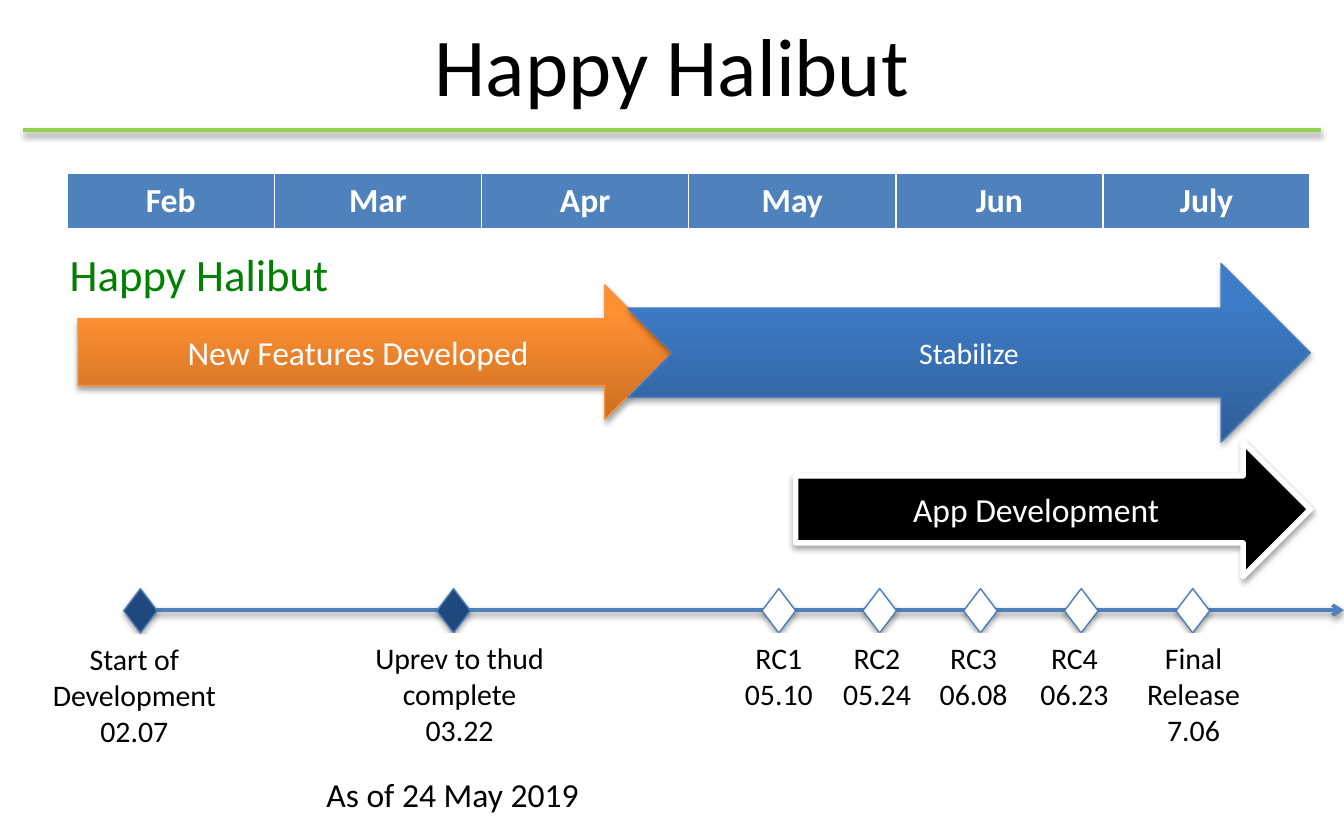
"""Build the Happy Halibut release timeline slide."""
import pptx
import pptx.util
import pptx.dml.color
import pptx.enum.shapes
import pptx.enum.text
import pptx.oxml
import pptx.oxml.ns

Inches, Pt = pptx.util.Inches, pptx.util.Pt
RGBColor = pptx.dml.color.RGBColor
MSO_SHAPE = pptx.enum.shapes.MSO_SHAPE
PP_ALIGN = pptx.enum.text.PP_ALIGN
MSO_ANCHOR = pptx.enum.text.MSO_ANCHOR

BLACK = RGBColor(0x00, 0x00, 0x00)
WHITE = RGBColor(0xFF, 0xFF, 0xFF)
GREEN = RGBColor(0x00, 0x80, 0x00)
LIME = RGBColor(0x92, 0xD0, 0x50)
BLUE = RGBColor(0x4F, 0x81, 0xBD)
NAVY = RGBColor(0x1F, 0x49, 0x7D)
EDGE_BLUE = RGBColor(0x4B, 0x7E, 0xBC)
EDGE_ORANGE = RGBColor(0xF6, 0x92, 0x40)
ORANGE_STOPS = (RGBColor(0xCC, 0x6E, 0x20), RGBColor(0xFF, 0x90, 0x34))
BLUE_STOPS = (RGBColor(0x2F, 0x5F, 0x99), RGBColor(0x3D, 0x7C, 0xC7))
BLACK_STOPS = (BLACK,)


def write(tf, text, size, color, align=PP_ALIGN.CENTER):
    tf.text = text
    tf.word_wrap = True
    for p in tf.paragraphs:
        p.alignment = align
        for r in p.runs:
            r.font.size = Pt(size)
            r.font.name = "Calibri"
            r.font.color.rgb = color


def add_line(s, x1, x2, y, color):
    line = s.shapes.add_connector(
        pptx.enum.shapes.MSO_CONNECTOR.STRAIGHT, Inches(x1), Inches(y), Inches(x2), Inches(y))
    line.line.color.rgb = color
    line.line.width = Pt(2)
    return line


prs = pptx.Presentation()
prs.slide_width, prs.slide_height = Inches(10), Inches(6.25)
s = prs.slides.add_slide(prs.slide_layouts[5])

add_line(s, 0.17, 9.83, 0.97, LIME)
title = s.shapes.title
title.left, title.top, title.width, title.height = Inches(0.5), Inches(0.12), Inches(9), Inches(0.71)
write(title.text_frame, "Happy Halibut", 44, BLACK)
title.text_frame.vertical_anchor = MSO_ANCHOR.MIDDLE

months = ["Feb", "Mar", "Apr", "May", "Jun", "July"]
table = s.shapes.add_table(
    1, len(months), Inches(0.5), Inches(1.29), Inches(9.25), Inches(0.41)).table
for cell, month in zip(table.rows[0].cells, months):
    cell.fill.solid()
    cell.fill.fore_color.rgb = BLUE
    write(cell.text_frame, month, 18, WHITE)
    cell.text_frame.paragraphs[0].runs[0].font.bold = True

axis = add_line(s, 1, 10, 4.54, BLUE)
axis.line._get_or_add_ln().append(pptx.oxml.parse_xml(
    f'<a:tailEnd {pptx.oxml.ns.nsdecls("a")} type="arrow"/>'))

captions = [
    (0.42, 1.79, 3.75, 0.5, "Happy Halibut", 24, GREEN),
    (2.33, 5.71, 2.75, 0.4, "As of 24 May 2019", 18, BLACK),
]
for x, y, w, h, text, size, color in captions:
    sp = s.shapes.add_textbox(Inches(x), Inches(y), Inches(w), Inches(h))
    write(sp.text_frame, text, size, color, PP_ALIGN.LEFT)

arrows = [
    (MSO_SHAPE.RIGHT_ARROW, 0.58, 2.12, 4.42, 1, "New Features Developed", 18,
     ORANGE_STOPS, EDGE_ORANGE, 0.75),
    (MSO_SHAPE.NOTCHED_RIGHT_ARROW, 4.67, 1.96, 5.08, 1.33, "Stabilize", 16,
     BLUE_STOPS, EDGE_BLUE, 0.75),
    (MSO_SHAPE.RIGHT_ARROW, 5.92, 3.29, 3.83, 1, "App Development", 18,
     BLACK_STOPS, WHITE, 3),
]
for kind, x, y, w, h, text, size, colors, edge, weight in arrows:
    sp = s.shapes.add_shape(kind, Inches(x), Inches(y), Inches(w), Inches(h))
    if len(colors) == 1:
        sp.fill.solid()
        sp.fill.fore_color.rgb = colors[0]
    else:
        sp.fill.gradient()
        sp.fill.gradient_angle = 90
        for stop, color, position in zip(sp.fill.gradient_stops, colors, (0, 0.8)):
            stop.color.rgb = color
            stop.position = position
    sp.line.color.rgb = edge
    sp.line.width = Pt(weight)
    write(sp.text_frame, text, size, WHITE)
    sp.text_frame.vertical_anchor = MSO_ANCHOR.MIDDLE

milestones = [
    (0.92, NAVY, 0.25, 4.72, 1.5, 0.91, "Start of Development\n02.07"),
    (3.25, NAVY, 2.67, 4.71, 1.5, 0.91, "Uprev to thud complete\n03.22"),
    (5.67, WHITE, 5.42, 4.71, 0.75, 0.64, "RC1\n05.10"),
    (6.42, WHITE, 6.17, 4.71, 0.71, 0.64, "RC2\n05.24"),
    (7.17, WHITE, 6.83, 4.71, 0.83, 0.64, "RC3\n06.08"),
    (7.92, WHITE, 7.58, 4.71, 0.83, 0.64, "RC4\n06.23"),
    (8.75, WHITE, 8.42, 4.71, 0.92, 0.91, "Final Release 7.06"),
]
for marker_x, color, x, y, w, h, text in milestones:
    sp = s.shapes.add_shape(
        MSO_SHAPE.DIAMOND, Inches(marker_x), Inches(4.38), Inches(0.25), Inches(0.33))
    sp.fill.solid()
    sp.fill.fore_color.rgb = color
    sp.line.color.rgb = EDGE_BLUE
    sp.line.width = Pt(0.75)
    sp = s.shapes.add_textbox(Inches(x), Inches(y), Inches(w), Inches(h))
    sp.fill.solid()
    sp.fill.fore_color.rgb = WHITE
    write(sp.text_frame, text, 16, BLACK)
    sp.text_frame.margin_left = sp.text_frame.margin_right = Inches(0.05)

prs.save("out.pptx")
